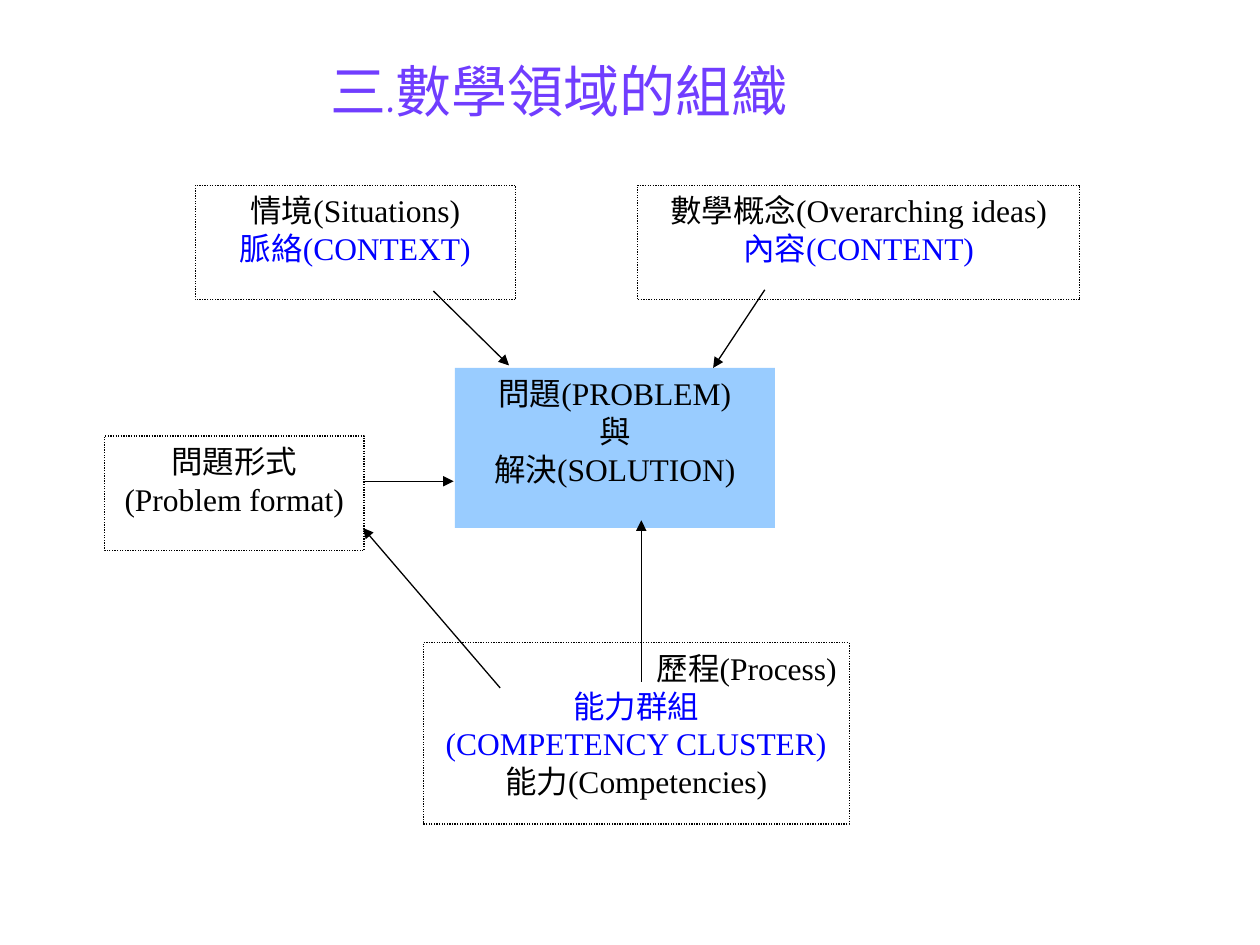
from lxml import etree
from pptx import Presentation
from pptx.dml.color import RGBColor
from pptx.enum import dml, shapes, text
from pptx.oxml import ns
from pptx.util import Inches, Pt

THEME = {
    "title": RGBColor(0x70, 0x3D, 0xFF),
    "black": RGBColor(0, 0, 0),
    "blue": RGBColor(0, 0, 0xFF),
    "white": RGBColor(0xFF, 0xFF, 0xFF),
    "problem": RGBColor(0x99, 0xCC, 0xFF),
    "title_font": "Comic Neue",
    "body_font": "Times New Roman",
    "title_size": Pt(32),
    "body_size": Pt(18),
    "line": Pt(0.75),
}

TITLE = "三.數學領域的組織"

# Each box: position and size, fill, dotted outline, (line of text, colour)
BOXES = [
    ((1.55, 1.47, 2.54, 0.91), "white", True,
     [("情境(Situations)", "black"), ("脈絡(CONTEXT)", "blue")]),
    ((5.06, 1.47, 3.51, 0.91), "white", True,
     [("數學概念(Overarching ideas)", "black"), ("內容(CONTENT)", "blue")]),
    ((3.61, 2.92, 2.54, 1.27), "problem", False,
     [("問題(PROBLEM)", "black"), ("與", "black"), ("解決(SOLUTION)", "black")]),
    ((3.36, 5.1, 3.38, 1.44), "white", True,
     [("歷程(Process)", "black"), ("能力群組", "blue"),
      ("(COMPETENCY CLUSTER)", "blue"), ("能力(Competencies)", "black")]),
    ((0.83, 3.46, 2.06, 0.91), "white", True,
     [("問題形式", "black"), ("(Problem format)", "black")]),
]
RIGHT_ALIGNED = {"歷程(Process)"}

# Arrows: start x, y and end x, y
ARROWS = [
    (3.44, 2.31, 4.04, 2.9),
    (6.07, 2.3, 5.66, 2.92),
    (5.09, 5.41, 5.09, 4.13),
    (3.97, 5.46, 2.88, 4.19),
    (2.88, 3.82, 3.6, 3.82),
]


def style_font(font, name, size, color):
    font.name = THEME[name]
    font.size = THEME[size]
    font.color.rgb = THEME[color]


def add_title(page):
    title = page.shapes.title
    title.left, title.top, title.width, title.height = map(
        Inches, (0.75, 0.17, 7.51, 0.91))
    frame = title.text_frame
    frame.text = TITLE
    frame.auto_size = text.MSO_AUTO_SIZE.NONE
    frame.vertical_anchor = text.MSO_ANCHOR.BOTTOM
    frame.margin_right = Inches(0.23)
    frame.margin_bottom = Inches(0.1)
    para = frame.paragraphs[0]
    para.alignment = text.PP_ALIGN.CENTER
    style_font(para.runs[0].font, "title_font", "title_size", "title")


def add_box(page, place, fill, outlined, lines):
    box = page.shapes.add_shape(
        shapes.MSO_SHAPE.RECTANGLE, *map(Inches, place))
    box.shadow.inherit = False
    box.fill.solid()
    box.fill.fore_color.rgb = THEME[fill]
    if outlined:
        box.line.color.rgb = THEME["black"]
        box.line.width = THEME["line"]
        box.line.dash_style = dml.MSO_LINE.ROUND_DOT
    else:
        box.line.fill.background()
    frame = box.text_frame
    frame.word_wrap = True
    frame.vertical_anchor = text.MSO_ANCHOR.TOP
    frame.text = "\n".join(words for words, _ in lines)
    for para, (words, color) in zip(frame.paragraphs, lines):
        para.alignment = (text.PP_ALIGN.RIGHT if words in RIGHT_ALIGNED
                          else text.PP_ALIGN.CENTER)
        style_font(para.runs[0].font, "body_font", "body_size", color)


def add_arrow(page, ends):
    arrow = page.shapes.add_connector(
        shapes.MSO_CONNECTOR.STRAIGHT, *map(Inches, ends))
    arrow.line.color.rgb = THEME["black"]
    arrow.line.width = THEME["line"]
    properties = arrow.line._get_or_add_ln()
    etree.SubElement(properties, ns.qn("a:tailEnd"), type="triangle")
    etree.SubElement(arrow._element.spPr, ns.qn("a:effectLst"))


def main():
    deck = Presentation()
    deck.slide_width, deck.slide_height = Inches(10), Inches(7.5)
    page = deck.slides.add_slide(deck.slide_layouts.get_by_name("Title Only"))
    add_title(page)
    # Boxes first, so that the arrows lie on top
    for box in BOXES:
        add_box(page, *box)
    for ends in ARROWS:
        add_arrow(page, ends)
    deck.save("out.pptx")


if __name__ == "__main__":
    main()
